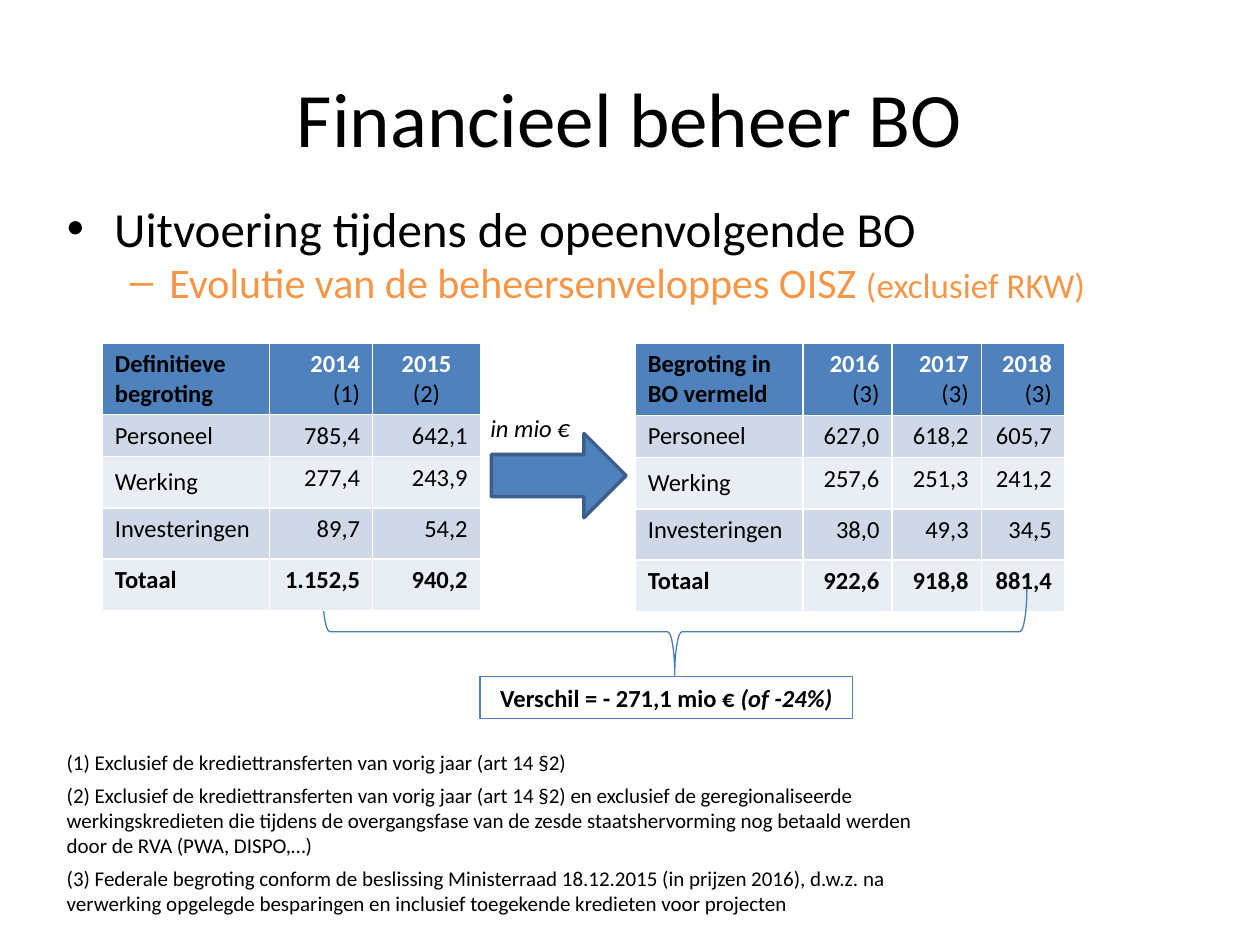
from pptx import Presentation
from pptx.dml.color import RGBColor
from pptx.enum.shapes import MSO_SHAPE
from pptx.enum.text import MSO_ANCHOR, PP_ALIGN
from pptx.util import Pt

BLUE, BLACK, WHITE, ORANGE = "4F81BD", "000000", "FFFFFF", "F79646"
BANDS = ["D0D8E8", "E9EDF4"]
ROW_HEIGHTS = [40.6, 24, 29.3, 29.3, 29.3]


def color(value):
    return RGBColor.from_string(value)


def add_label(left, top, width, height, parts, size, align=PP_ALIGN.LEFT):
    """Add a wrapped text box; parts are (text, bold, italic) runs."""
    box = slide.shapes.add_textbox(Pt(left), Pt(top), Pt(width), Pt(height))
    box.text_frame.word_wrap = True
    paragraph = box.text_frame.paragraphs[0]
    paragraph.alignment = align
    paragraph.font.name = "Calibri"
    paragraph.font.size = Pt(size)
    paragraph.font.color.rgb = color(BLACK)
    for text, bold, italic in parts:
        run = paragraph.add_run()
        run.text = text
        run.font.bold = bold
        run.font.italic = italic
    return box


presentation = Presentation()
presentation.slide_width, presentation.slide_height = Pt(720), Pt(540)
slide = presentation.slides.add_slide(presentation.slide_layouts[1])

# Title and list
title = slide.shapes.title
title.left, title.top, title.width, title.height = Pt(36), Pt(21.6), Pt(648), Pt(90)
title.text = "Financieel beheer BO"
title_line = title.text_frame.paragraphs[0]
title_line.font.name = "Calibri"
title_line.font.size = Pt(44)
title_line.font.color.rgb = color(BLACK)

body = slide.placeholders[1]
body.left, body.top, body.width, body.height = Pt(31), Pt(116.6), Pt(635), Pt(402.5)
topics = [
    (0, 28, BLACK, [("Uitvoering tijdens de opeenvolgende BO", 28)]),
    (1, 24, ORANGE, [("Evolutie van de beheersenveloppes OISZ ", 24), ("(exclusief RKW)", 20)]),
]
for index, (level, size, ink, parts) in enumerate(topics):
    topic = body.text_frame.add_paragraph() if index else body.text_frame.paragraphs[0]
    topic.level = level
    topic.line_spacing = 0.8
    topic.font.name = "Calibri"
    topic.font.size = Pt(size)
    topic.font.color.rgb = color(ink)
    for text, run_size in parts:
        run = topic.add_run()
        run.text = text
        run.font.size = Pt(run_size)
        run.font.color.rgb = color(ink)

# Budget tables, with the arrow, brace and difference between them
budget_2016 = (363, [95.8, 51, 51, 47.5], [
    ["Begroting in BO vermeld", "2016 (3)", "2017 (3)", "2018 (3)"],
    ["Personeel", "627,0", "618,2", "605,7"],
    ["Werking", "257,6", "251,3", "241,2"],
    ["Investeringen", "38,0", "49,3", "34,5"],
    ["Totaal", "922,6", "918,8", "881,4"],
])
budget_2014 = (58.5, [95.5, 59, 61.5], [
    ["Definitieve begroting", "2014 (1)", "2015 (2)"],
    ["Personeel", "785,4", "642,1"],
    ["Werking", "277,4", "243,9"],
    ["Investeringen", "89,7", "54,2"],
    ["Totaal", "1.152,5", "940,2"],
])
for left, widths, rows in (budget_2016, budget_2014):
    table = slide.shapes.add_table(len(rows), len(widths), Pt(left), Pt(196),
                                   Pt(sum(widths)), Pt(sum(ROW_HEIGHTS))).table
    for column, width in zip(table.columns, widths):
        column.width = Pt(width)
    for r, values in enumerate(rows):
        table.rows[r].height = Pt(ROW_HEIGHTS[r])
        for c, value in enumerate(values):
            cell = table.cell(r, c)
            cell.fill.solid()
            cell.fill.fore_color.rgb = color(BANDS[(r - 1) % 2] if r else BLUE)
            if value == "Werking":
                cell.vertical_anchor = MSO_ANCHOR.MIDDLE
            entry = cell.text_frame.paragraphs[0]
            entry.alignment = PP_ALIGN.RIGHT if c else PP_ALIGN.LEFT
            if value == "2015 (2)":
                entry.alignment = PP_ALIGN.CENTER
            entry.font.name = "Calibri"
            entry.font.size = Pt(14)
            if r == 0 and c:
                year, note = value.split()
                parts = [(year + " ", WHITE, True), (note, BLACK, False)]
            else:
                parts = [(value, BLACK, r in (0, len(rows) - 1))]
            for text, ink, bold in parts:
                run = entry.add_run()
                run.text = text
                run.font.bold = bold
                run.font.color.rgb = color(ink)

    if rows[0][1].startswith("2016"):
        arrow = slide.shapes.add_shape(MSO_SHAPE.RIGHT_ARROW, Pt(280.8), Pt(247.7), Pt(77), Pt(48.2))
        arrow.shadow.inherit = False
        arrow.fill.solid()
        arrow.fill.fore_color.rgb = color(BLUE)
        arrow.line.color.rgb = color("3A5F8C")
        arrow.line.width = Pt(2)

        add_label(265, 232.6, 67.7, 24.2, [("in mio €", False, True)], 14, PP_ALIGN.RIGHT)
        difference = add_label(274.3, 386.6, 213, 24.2,
                               [("Verschil = - 271,1 mio € ", True, False), ("(of -24%)", True, True)],
                               14, PP_ALIGN.CENTER)
        difference.line.color.rgb = color(BLUE)
        difference.line.width = Pt(0.75)

        brace = slide.shapes.add_shape(MSO_SHAPE.RIGHT_BRACE, Pt(360.7), Pt(159.8), Pt(49.7), Pt(402.5))
        brace.rotation = 90
        brace.shadow.inherit = False
        brace.fill.background()
        brace.line.color.rgb = color("4B7EBC")
        brace.line.width = Pt(0.75)

# Footnotes
footnotes = [
    (443.5, 504.7, 51, "(2) Exclusief de krediettransferten van vorig jaar (art 14 §2) en exclusief de "
     "geregionaliseerde werkingskredieten die tijdens de overgangsfase van de zesde "
     "staatshervorming nog betaald werden door de RVA (PWA, DISPO,…)"),
    (491, 504.7, 36, "(3) Federale begroting conform de beslissing Ministerraad 18.12.2015 (in prijzen "
     "2016), d.w.z. na verwerking opgelegde besparingen en inclusief toegekende kredieten "
     "voor projecten"),
    (424.8, 465, 21.6, "(1) Exclusief de krediettransferten van vorig jaar (art 14 §2)"),
]
for top, width, height, text in footnotes:
    add_label(31, top, width, height, [(text, False, False)], 12)

presentation.save("out.pptx")
